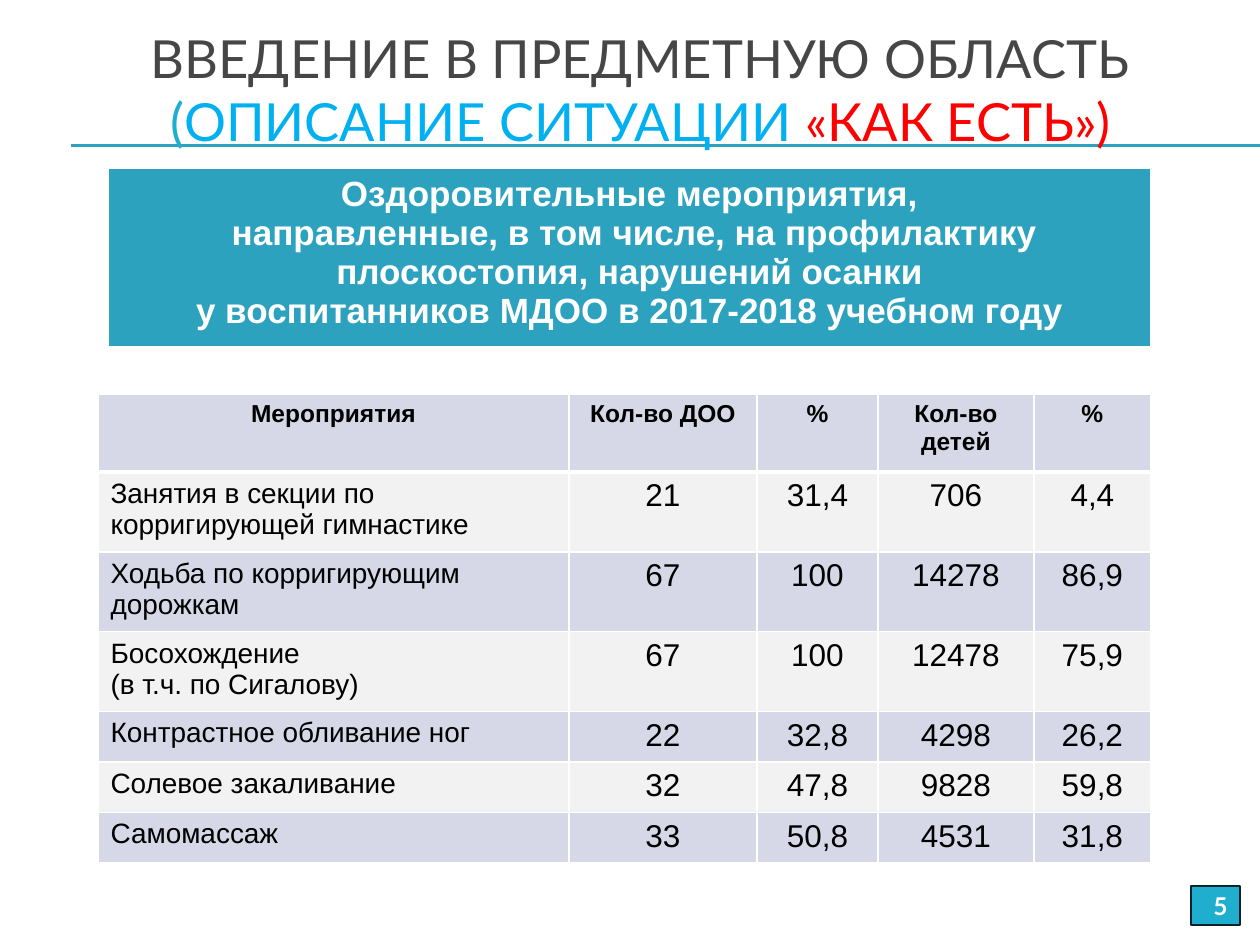
from lxml import etree
from pptx import Presentation
from pptx.dml.color import RGBColor
from pptx.enum.shapes import MSO_CONNECTOR, MSO_SHAPE
from pptx.enum.text import MSO_ANCHOR, PP_ALIGN
from pptx.oxml.ns import qn
from pptx.util import Pt

EMU_PER_PX = 914400 / 126
LEFT, CENTER, RIGHT = PP_ALIGN.LEFT, PP_ALIGN.CENTER, PP_ALIGN.RIGHT
MIDDLE = MSO_ANCHOR.MIDDLE
STRAIGHT = MSO_CONNECTOR.STRAIGHT
RECTANGLE = MSO_SHAPE.RECTANGLE

WHITE = RGBColor(0xFF, 0xFF, 0xFF)
BLACK = RGBColor(0, 0, 0)
GRAY = RGBColor(0x46, 0x46, 0x46)
TEAL = RGBColor(0x2D, 0xA2, 0xBF)
CYAN = RGBColor(0x1F, 0xAE, 0xCD)
BLUE = RGBColor(0, 0xB0, 0xF0)
RED = RGBColor(0xFF, 0, 0)
DARK = RGBColor(0x06, 0x23, 0x29)
LAVENDER = RGBColor(0xD7, 0xD8, 0xE7)
LIGHT = RGBColor(0xF2, 0xF2, 0xF2)

TITLE = {"name": "Lato", "size": Pt(30), "bold": False}
NUMBER = {"name": "Lato", "size": Pt(14), "bold": True}
BANNER = {"name": "Arial", "size": Pt(20), "bold": True}
HEADING = {"name": "Arial", "size": Pt(14), "bold": True}
ACTIVITY = {"name": "Arial", "size": Pt(16), "bold": False}
VALUE = {"name": "Arial", "size": Pt(18), "bold": False}

BANNER_TEXT = (
    "Оздоровительные мероприятия,\n"
    " направленные, в том числе, на профилактику плоскостопия, нарушений осанки\n"
    "у воспитанников МДОО в 2017-2018 учебном году"
)
HEADINGS = ["Мероприятия", "Кол-во ДОО", "%", "Кол-во детей", "%"]
ACTIVITIES = [
    ["Занятия в секции по корригирующей гимнастике", "21", "31,4", "706", "4,4"],
    ["Ходьба по корригирующим дорожкам", "67", "100", "14278", "86,9"],
    ["Босохождение\n(в т.ч. по Сигалову)", "67", "100", "12478", "75,9"],
    ["Контрастное обливание ног", "22", "32,8", "4298", "26,2"],
    ["Солевое закаливание", "32", "47,8", "9828", "59,8"],
    ["Самомассаж", "33", "50,8", "4531", "31,8"],
]
COLUMN_WIDTHS = [471, 188, 121, 156, 117]
ROW_HEIGHTS = [78, 79, 75, 75, 48, 48, 47]


def px(*lengths):
    """Turn pixel lengths into EMU."""
    return [round(length * EMU_PER_PX) for length in lengths]


def add_run(paragraph, text, style, color):
    """Add one formatted run."""
    run = paragraph.add_run()
    run.text = text
    for name, value in style.items():
        setattr(run.font, name, value)
    run.font.color.rgb = color


def write_text(frame, text, style, color, alignment):
    """Write each line of the text as a paragraph."""
    for index, line in enumerate(text.split("\n")):
        paragraph = frame.add_paragraph() if index else frame.paragraphs[0]
        paragraph.alignment = alignment
        add_run(paragraph, line, style, color)


def add_rule(slide, y):
    """Draw a horizontal rule to the right slide edge."""
    start_x, end_x, level = px(71, 1260, y)
    rule = slide.shapes.add_connector(STRAIGHT, start_x, level, end_x, level)
    rule.line.color.rgb = TEAL
    rule.line.width = Pt(0.75)
    etree.SubElement(rule.element.spPr, qn("a:effectLst"))


def add_title(slide):
    """Add the two-line coloured title."""
    frame = slide.shapes.add_textbox(*px(42, 63, 1197, 116)).text_frame
    frame.word_wrap = True
    frame.vertical_anchor = MIDDLE
    frame.margin_top, frame.margin_bottom = px(6, 70)
    paragraph = frame.paragraphs[0]
    paragraph.alignment = CENTER
    add_run(paragraph, "ВВЕДЕНИЕ В ПРЕДМЕТНУЮ ОБЛАСТЬ", TITLE, GRAY)
    paragraph.add_line_break()
    add_run(paragraph, "(", TITLE, CYAN)
    add_run(paragraph, "ОПИСАНИЕ СИТУАЦИИ ", TITLE, BLUE)
    add_run(paragraph, "«КАК ЕСТЬ»)", TITLE, RED)


def set_borders(cell, bottom_width):
    """Give the cell white borders."""
    properties = cell._tc.get_or_add_tcPr()
    widths = {"a:lnL": 1, "a:lnR": 1, "a:lnT": 1, "a:lnB": bottom_width}
    for tag, width in widths.items():
        line = etree.SubElement(properties, qn(tag), w=str(Pt(width)))
        fill = etree.SubElement(line, qn("a:solidFill"))
        etree.SubElement(fill, qn("a:srgbClr"), val=str(WHITE))


def fill_cell(cell, text, style, color, alignment, background, bottom_width=1):
    """Set the text, borders and background of a cell."""
    write_text(cell.text_frame, text, style, color, alignment)
    set_borders(cell, bottom_width)
    cell.fill.solid()
    cell.fill.fore_color.rgb = background


def add_grid(slide, left, top, widths, heights):
    """Add a table with the given column widths and row heights."""
    position = px(left, top, sum(widths), sum(heights))
    table = slide.shapes.add_table(len(heights), len(widths), *position).table
    for column, width in zip(table.columns, px(*widths)):
        column.width = width
    for row, height in zip(table.rows, px(*heights)):
        row.height = height
    return table


def add_banner(slide):
    """Add the one-cell heading table."""
    table = add_grid(slide, 108, 168, [1043], [166])
    fill_cell(table.cell(0, 0), BANNER_TEXT, BANNER, WHITE, CENTER, TEAL, 3)


def add_activities(slide):
    """Add the table of health activities."""
    table = add_grid(slide, 98, 394, COLUMN_WIDTHS, ROW_HEIGHTS)
    for column, heading in enumerate(HEADINGS):
        fill_cell(table.cell(0, column), heading, HEADING, BLACK, CENTER, LAVENDER, 3)
    for row, values in enumerate(ACTIVITIES, start=1):
        background = LIGHT if row % 2 else LAVENDER
        for column, value in enumerate(values):
            style, alignment = (VALUE, CENTER) if column else (ACTIVITY, LEFT)
            fill_cell(table.cell(row, column), value, style, BLACK, alignment, background)


def add_page_number(slide):
    """Add the boxed page number."""
    shape = slide.shapes.add_shape(RECTANGLE, *px(1191, 886, 49, 39))
    shape.shadow.inherit = False
    shape.fill.solid()
    shape.fill.fore_color.rgb = CYAN
    shape.line.color.rgb = DARK
    shape.line.width = Pt(0.75)
    shape.text_frame.vertical_anchor = MIDDLE
    write_text(shape.text_frame, "5", NUMBER, WHITE, RIGHT)


def main():
    """Build and save the slide."""
    presentation = Presentation()
    presentation.slide_width, presentation.slide_height = px(1260, 945)
    slide = presentation.slides.add_slide(presentation.slide_layouts[6])
    for y in (145, 146):
        add_rule(slide, y)
    add_title(slide)
    add_banner(slide)
    add_activities(slide)
    add_page_number(slide)
    presentation.save("out.pptx")


if __name__ == "__main__":
    main()
